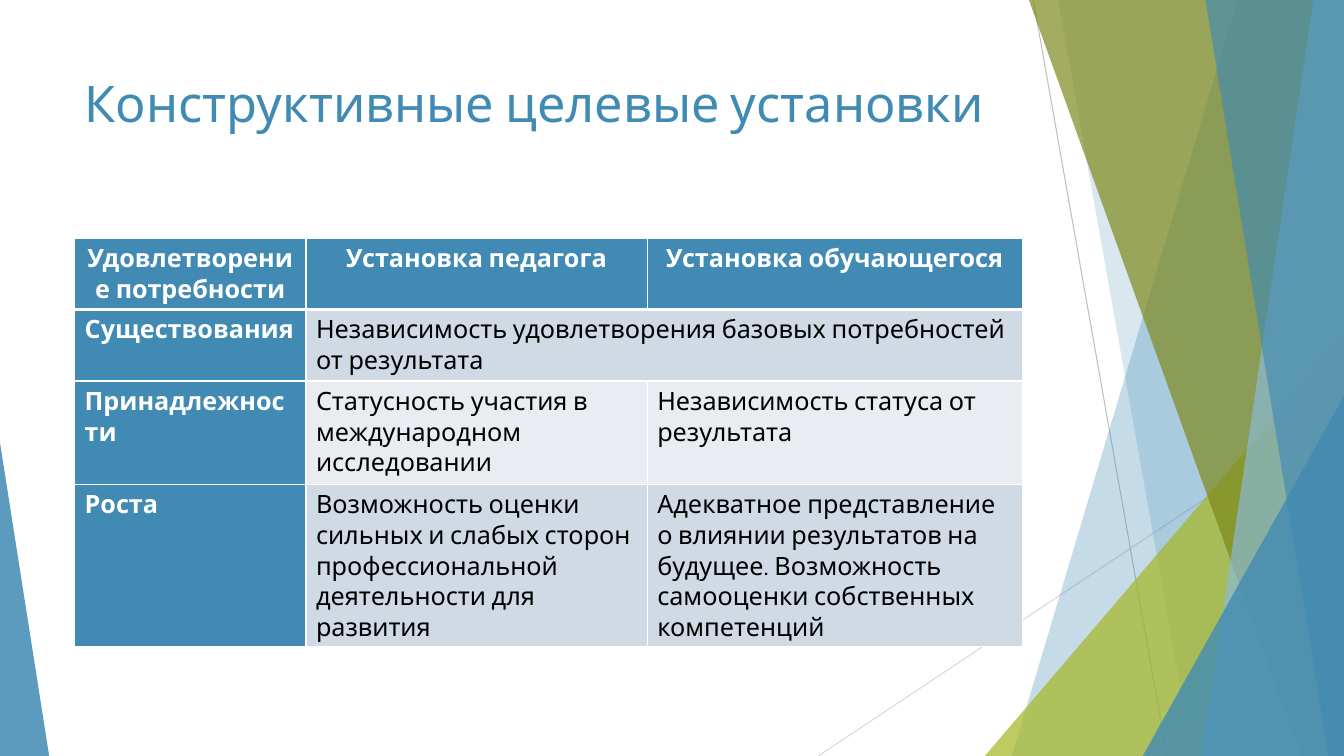
from lxml.etree import SubElement
from pptx import Presentation
from pptx.dml.color import RGBColor
from pptx.enum.shapes import MSO_CONNECTOR, MSO_SHAPE
from pptx.enum.text import PP_ALIGN
from pptx.oxml.ns import qn
from pptx.util import Cm, Pt

WIDTH, HEIGHT = 33.87, 19.05
BLUE = RGBColor(0x41, 0x8A, 0xB3)
LIGHT_BLUE = RGBColor(0x8A, 0xBA, 0xD4)
LIME = RGBColor(0xA6, 0xB7, 0x27)
OLIVE = RGBColor(0x7D, 0x89, 0x1D)
GREY = RGBColor(0xBF, 0xBF, 0xBF)
PALE_GREY = RGBColor(0xD9, 0xD9, 0xD9)
ROW_DARK = RGBColor(0xCF, 0xDA, 0xE5)
ROW_LIGHT = RGBColor(0xE9, 0xED, 0xF2)
WHITE = RGBColor(0xFF, 0xFF, 0xFF)
BLACK = RGBColor(0, 0, 0)

COLUMN_WIDTHS = [5.83, 8.6, 9.45]
ROW_HEIGHTS = [1.8, 1.8, 2.6, 4.1]
ATTITUDES = [
    ["Удовлетворение потребности", "Установка педагога", "Установка обучающегося"],
    ["Существования", "Независимость удовлетворения базовых потребностей от результата", ""],
    ["Принадлежности", "Статусность участия в международном исследовании",
     "Независимость статуса от результата"],
    ["Роста",
     "Возможность оценки сильных и слабых сторон профессиональной деятельности для развития",
     "Адекватное представление о влиянии результатов на будущее. "
     "Возможность самооценки собственных компетенций"],
]


class SlideBuilder:
    font = "Cabin"

    def __init__(self, slide):
        self.slide = slide
        self.shapes = slide.shapes

    def style_text(self, paragraph, size, color, bold=False):
        for run in paragraph.runs:
            run.font.name = self.font
            run.font.size = Pt(size)
            run.font.bold = bold
            run.font.color.rgb = color

    def paint(self, shape, color, opacity):
        """Fill a borderless shape; opacity is a percentage."""
        shape.shadow.inherit = False
        shape.line.fill.background()
        shape.fill.solid()
        shape.fill.fore_color.rgb = color
        tint = shape.fill._xPr.find(qn("a:solidFill"))[0]
        SubElement(tint, qn("a:alpha"), val=str(opacity * 1000))

    def thin_line(self, x1, y1, x2, y2, color):
        line = self.shapes.add_connector(
            MSO_CONNECTOR.STRAIGHT, Cm(x1), Cm(y1), Cm(x2), Cm(y2))
        line.line.color.rgb = color
        line.line.width = Pt(0.75)
        SubElement(line._element.spPr, qn("a:effectLst"))

    def band(self, top_x, bottom_x, color, opacity):
        """Fill from a slanted left edge to the right edge of the slide."""
        outline = self.shapes.build_freeform(Cm(top_x), 0)
        outline.add_line_segments([
            (Cm(WIDTH), 0), (Cm(WIDTH), Cm(HEIGHT)), (Cm(bottom_x), Cm(HEIGHT))])
        self.paint(outline.convert_to_shape(), color, opacity)

    def corner(self, left, width, height, apex, color, opacity):
        """Right triangle standing on the bottom edge of the slide."""
        triangle = self.shapes.add_shape(
            MSO_SHAPE.ISOSCELES_TRIANGLE,
            Cm(left), Cm(HEIGHT - height), Cm(width), Cm(height))
        triangle.adjustments[0] = apex
        self.paint(triangle, color, opacity)

    def title(self, text):
        frame = self.shapes.add_textbox(Cm(1.88), Cm(1.7), Cm(23.88), Cm(3.66)).text_frame
        frame.word_wrap = True
        frame.text = text
        self.style_text(frame.paragraphs[0], 36, BLUE)

    def cell_borders(self, cell, bottom_width):
        properties = cell._tc.get_or_add_tcPr()
        for side, width in zip("LRTB", (1, 1, 1, bottom_width)):
            border = SubElement(properties, qn(f"a:ln{side}"), w=str(Pt(width)))
            SubElement(SubElement(border, qn("a:solidFill")),
                       qn("a:srgbClr"), val=str(WHITE))

    def table(self, rows):
        table = self.shapes.add_table(
            len(rows), len(COLUMN_WIDTHS), Cm(1.88), Cm(6),
            Cm(sum(COLUMN_WIDTHS)), Cm(sum(ROW_HEIGHTS))).table
        table.first_row = table.horz_banding = False
        for column, width in zip(table.columns, COLUMN_WIDTHS):
            column.width = Cm(width)
        for r, (row, height) in enumerate(zip(rows, ROW_HEIGHTS)):
            table.rows[r].height = Cm(height)
            for c, text in enumerate(row):
                cell = table.cell(r, c)
                heading = r == 0 or c == 0
                cell.text = text
                paragraph = cell.text_frame.paragraphs[0]
                paragraph.alignment = PP_ALIGN.CENTER if r == 0 else PP_ALIGN.LEFT
                self.style_text(paragraph, 18, WHITE if heading else BLACK, heading)
                self.cell_borders(cell, 3 if r == 0 else 1)
                cell.fill.solid()
                body = ROW_DARK if r % 2 else ROW_LIGHT
                cell.fill.fore_color.rgb = BLUE if heading else body
        table.cell(1, 1).merge(table.cell(1, 2))


def main():
    deck = Presentation()
    deck.slide_width, deck.slide_height = Cm(WIDTH), Cm(HEIGHT)
    builder = SlideBuilder(deck.slides.add_slide(deck.slide_layouts[6]))

    builder.thin_line(26.04, 0, 29.41, HEIGHT, GREY)
    builder.thin_line(WIDTH, 10.24, 20.62, HEIGHT, PALE_GREY)
    builder.band(31.19, 25.5, BLUE, 30)
    builder.band(26.67, 30.05, BLUE, 20)
    builder.corner(24.82, 9.05, 10.59, 1, LIME, 72)
    builder.band(25.93, 32.79, OLIVE, 70)
    builder.band(33.1, 30.28, LIGHT_BLUE, 70)
    builder.band(30.38, 33.48, BLUE, 65)
    builder.corner(28.8, 5.07, 9.07, 1, BLUE, 80)
    builder.corner(0, 1.24, 7.9, 0, BLUE, 85)

    builder.title("Конструктивные целевые установки")
    builder.table(ATTITUDES)
    deck.save("out.pptx")


if __name__ == "__main__":
    main()
